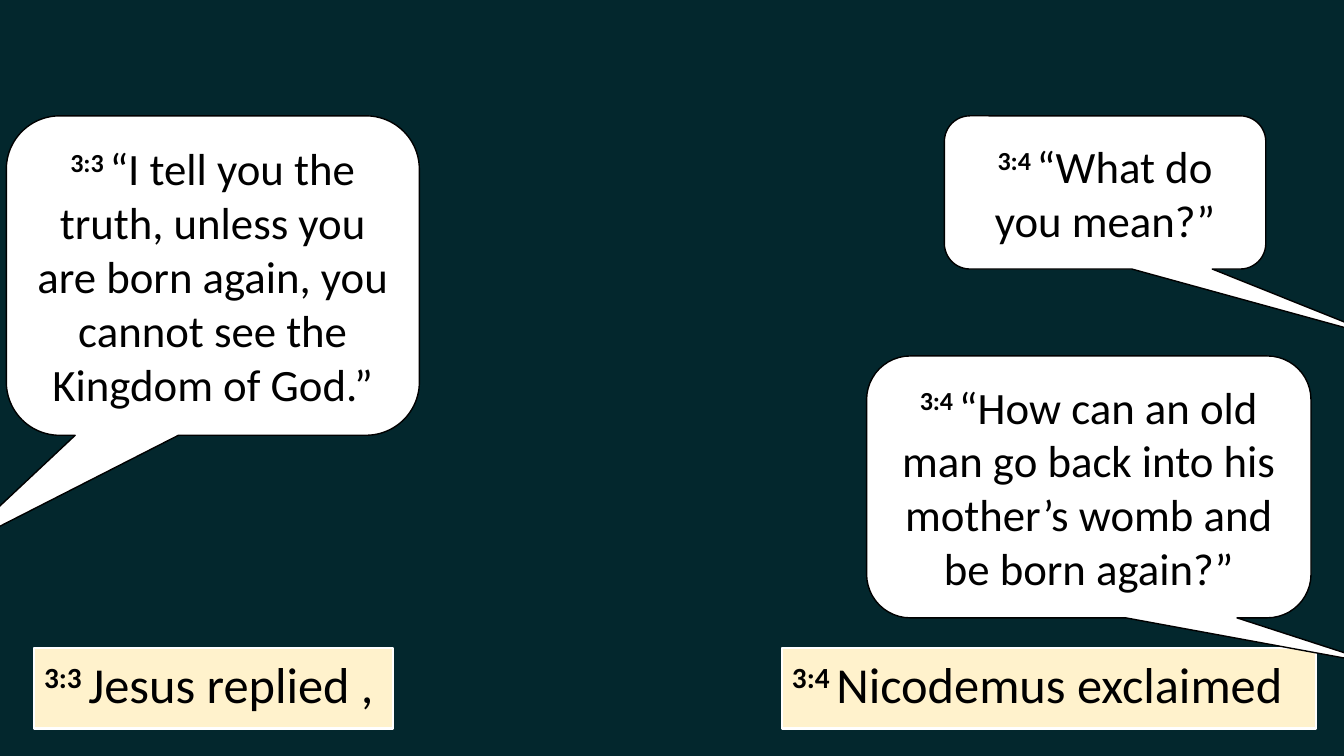
from dataclasses import dataclass

from pptx import Presentation
from pptx import util as u
from pptx.dml.color import RGBColor
from pptx.enum import shapes, text

COLORS = {
    "background": "03272D",
    "bubble": "FFFFFF",
    "caption": "FFF2CC",
    "ink": "000000",
    "caption_border": "FFFFFF",
}
FONT = "Calibri"
CAPTION_TOP, CAPTION_HEIGHT = 16.33, 2.03
BUBBLE_CORNER = 0.167


@dataclass(frozen=True)
class Bubble:
    """Speech bubble in cm; the tail is relative to its centre and size."""
    verse: str
    speech: str
    left: float
    top: float
    width: float
    height: float
    tail_x: float
    tail_y: float


@dataclass(frozen=True)
class Caption:
    verse: str
    narration: str
    left: float
    width: float


SCENE = [
    Bubble("3:3", "“I tell you the truth, unless you are born again, you cannot see "
           "the Kingdom of God.”", 0.16, 2.92, 10.41, 8.05, -0.63, 0.86),
    Caption("3:4", "Nicodemus exclaimed", 19.71, 13.46),
    Bubble("3:4", "“What do you mean?”", 23.8, 2.92, 8.1, 3.86, 0.88, 0.96),
    Caption("3:3", "Jesus replied ,", 0.86, 9.04),
    Bubble("3:4", "“How can an old man go back into his mother’s womb and be born again?”",
           21.84, 8.97, 11.2, 6.6, 0.66, 0.68),
]


def color(name: str) -> RGBColor:
    return RGBColor.from_string(COLORS[name])


def add_box(slide, kind, left: float, top: float, width: float, height: float,
            fill: str, border: str, border_width: float):
    shape = slide.shapes.add_shape(kind, u.Cm(left), u.Cm(top), u.Cm(width), u.Cm(height))
    shape.shadow.inherit = False
    shape.fill.solid()
    shape.fill.fore_color.rgb = color(fill)
    shape.line.color.rgb = color(border)
    shape.line.width = u.Pt(border_width)
    return shape


def add_run(paragraph, content: str, *, size: float, bold: bool = False,
            superscript: bool = False) -> None:
    run = paragraph.add_run()
    run.text = content
    run.font.name = FONT
    run.font.size = u.Pt(size)
    run.font.bold = bold
    run.font.color.rgb = color("ink")
    if superscript:
        run.font._element.set("baseline", "30000")


def write_verse(shape, verse: str, words: str, *, size: float, align, anchor) -> None:
    """Write the words after a raised, bold verse number."""
    frame = shape.text_frame
    frame.word_wrap = True
    frame.vertical_anchor = anchor
    paragraph = frame.paragraphs[0]
    paragraph.alignment = align
    add_run(paragraph, f"{verse} ", size=size, bold=True, superscript=True)
    add_run(paragraph, words, size=size)


def draw_bubble(slide, bubble: Bubble) -> None:
    shape = add_box(slide, shapes.MSO_SHAPE.ROUNDED_RECTANGULAR_CALLOUT,
                    bubble.left, bubble.top, bubble.width, bubble.height,
                    "bubble", "ink", 1)
    for index, value in enumerate((bubble.tail_x, bubble.tail_y, BUBBLE_CORNER)):
        shape.adjustments[index] = value
    write_verse(shape, bubble.verse, bubble.speech, size=32,
                align=text.PP_ALIGN.CENTER, anchor=text.MSO_ANCHOR.MIDDLE)


def draw_caption(slide, caption: Caption) -> None:
    shape = add_box(slide, shapes.MSO_SHAPE.RECTANGLE,
                    caption.left, CAPTION_TOP, caption.width, CAPTION_HEIGHT,
                    "caption", "caption_border", 1.5)
    write_verse(shape, caption.verse, caption.narration, size=36,
                align=text.PP_ALIGN.LEFT, anchor=text.MSO_ANCHOR.TOP)


def main() -> None:
    presentation = Presentation()
    presentation.slide_width = u.Cm(33.87)
    presentation.slide_height = u.Cm(19.05)
    slide = presentation.slides.add_slide(presentation.slide_layouts[6])
    slide.background.fill.solid()
    slide.background.fill.fore_color.rgb = color("background")
    for element in SCENE:
        if isinstance(element, Bubble):
            draw_bubble(slide, element)
        else:
            draw_caption(slide, element)
    presentation.save("out.pptx")


if __name__ == "__main__":
    main()
